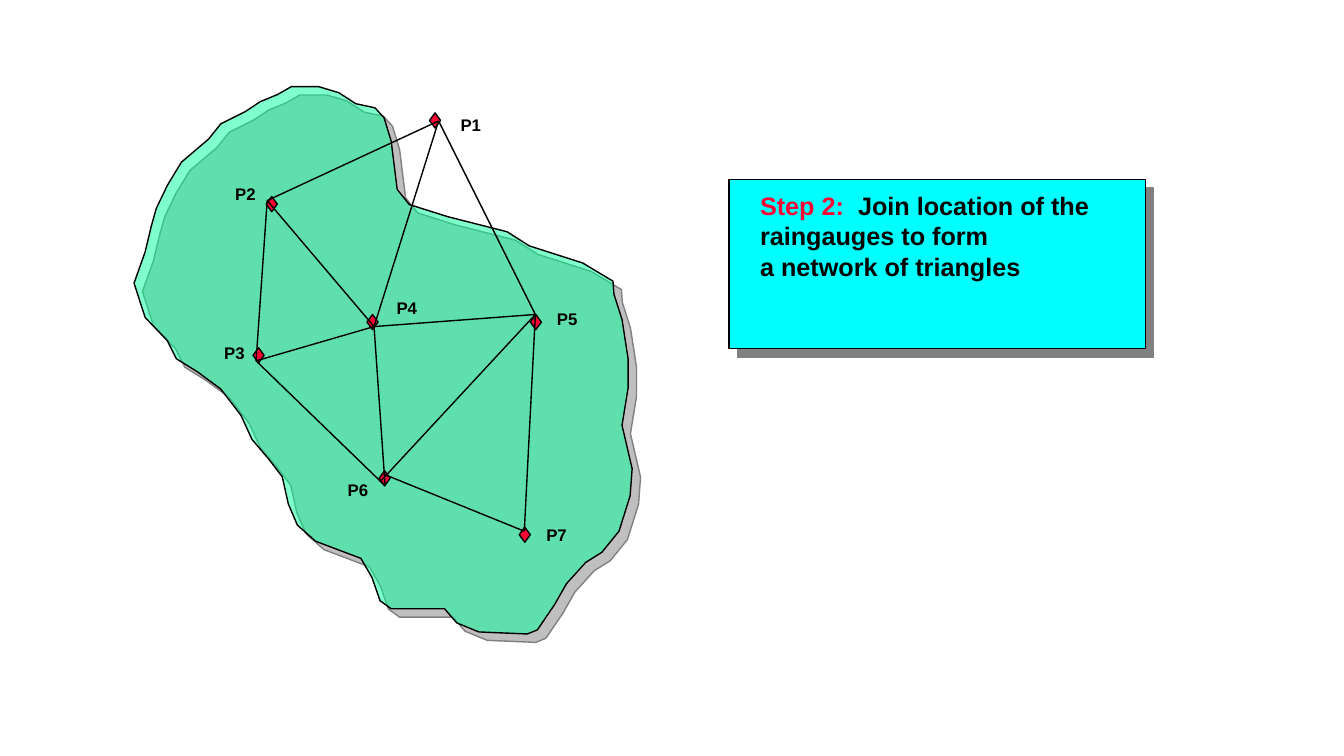
from lxml import etree
from pptx import Presentation
from pptx import util as u
from pptx.dml.color import RGBColor
from pptx.enum import shapes as kinds, text
from pptx.oxml.ns import qn

BLACK, RED, GREEN, CYAN, GREY = "000000", "FF0033", "00FF99", "00FFFF", "808080"
FONT = "Arial"

# Catchment boundary, in hundredths of an inch
CATCHMENT = [
    (275, 94), (258, 101), (243, 111), (219, 123), (207, 138), (180, 161), (166, 184),
    (155, 207), (150, 225), (144, 250), (133, 281), (144, 315), (166, 338), (175, 356),
    (196, 369), (219, 386), (239, 412), (250, 436), (267, 456), (280, 473), (286, 500),
    (295, 521), (313, 537), (358, 554), (369, 573), (377, 596), (388, 604), (441, 604),
    (453, 618), (475, 627), (523, 629), (533, 625), (550, 600), (562, 579), (581, 558),
    (597, 548), (614, 527), (625, 492), (627, 465), (617, 422), (623, 385), (623, 356),
    (617, 317), (609, 292), (608, 279), (578, 261), (525, 244), (503, 230), (444, 215),
    (406, 203), (394, 188), (388, 140), (381, 117), (372, 107), (353, 103), (336, 92),
    (316, 86), (289, 86),
]

# Raingauge: marker left and top, label left, top and width (inches)
GAUGES = {
    "P1": ((4.26, 1.12), (4.14, 1.09, 1.06)),
    "P2": ((2.64, 1.95), (2.01, 1.77, 0.85)),
    "P3": ((2.51, 3.45), (1.9, 3.35, 0.85)),
    "P4": ((3.64, 3.12), (3.61, 2.9, 0.85)),
    "P5": ((5.26, 3.12), (5.2, 3.01, 0.85)),
    "P6": ((3.76, 4.67), (3.07, 4.71, 0.96)),
    "P7": ((5.15, 5.23), (4.88, 5.16, 1.28)),
}
MARKER_SIZE = (0.11, 0.15)
LABEL_HEIGHT = 0.35

# Points where triangle sides meet; P6 is touched at three places
JOINTS = {
    "P1": (4.35, 1.2), "P2": (2.65, 1.99), "P3": (2.54, 3.58), "P4": (3.71, 3.24),
    "P5": (5.31, 3.12), "P6": (3.82, 4.82), "P7": (5.2, 5.27),
    "P6 left": (3.77, 4.78), "P6 top": (3.82, 4.71),
}
TRIANGLE_SIDES = [
    ("P2", "P1"), ("P2", "P3"), ("P3", "P4"), ("P1", "P4"), ("P1", "P5"), ("P4", "P5"),
    ("P2", "P4"), ("P3", "P6"), ("P4", "P6"), ("P6 left", "P5"), ("P6 top", "P7"), ("P5", "P7"),
]

STEP_PANEL = (7.23, 1.78, 4.13, 1.68)
STEP_AREA = (7.44, 1.84, 4.04, 1.17)
STEP = [
    [("Step 2:", RED), ("  Join location of the raingauges to form", BLACK)],
    [("a network of triangles", BLACK)],
]


def inches(*values):
    return [u.Cm(value * 2.54) for value in values]


def color(hex_code):
    return RGBColor.from_string(hex_code)


def paint(shape, fill):
    shape.fill.solid()
    shape.fill.fore_color.rgb = color(fill)
    shape.line.color.rgb = color(BLACK)
    shape.line.width = u.Pt(1)
    shape.shadow.inherit = False


def cast_shadow(shape):
    """Add a hard grey shadow towards the lower right."""
    effects = shape._element.spPr.find(qn("a:effectLst"))
    shadow = etree.SubElement(effects, qn("a:outerShdw"), dist=str(u.Pt(8.5)),
                              dir="2700000", algn="ctr", rotWithShape="0")
    etree.SubElement(shadow, qn("a:srgbClr"), val=GREY)


def write(slide, area, paragraphs, size, align):
    box = slide.shapes.add_textbox(*inches(*area))
    frame = box.text_frame
    frame.word_wrap = True
    for i, runs in enumerate(paragraphs):
        paragraph = frame.paragraphs[0] if i == 0 else frame.add_paragraph()
        paragraph.alignment = align
        for words, ink in runs:
            run = paragraph.add_run()
            run.text = words
            run.font.name = FONT
            run.font.size = u.Pt(size)
            run.font.bold = True
            run.font.color.rgb = color(ink)


def draw_catchment(slide):
    builder = slide.shapes.build_freeform(*CATCHMENT[0], scale=u.Cm(2.54) / 100)
    builder.add_line_segments(CATCHMENT[1:], close=True)
    catchment = builder.convert_to_shape()
    paint(catchment, GREEN)
    tint = catchment._element.spPr.find(qn("a:solidFill"))[0]
    etree.SubElement(tint, qn("a:alpha"), val="50000")
    cast_shadow(catchment)


def draw_network(slide):
    for marker, _ in GAUGES.values():
        paint(slide.shapes.add_shape(kinds.MSO_SHAPE.DIAMOND, *inches(*marker, *MARKER_SIZE)), RED)
    for start, end in TRIANGLE_SIDES:
        side = slide.shapes.add_connector(kinds.MSO_CONNECTOR.STRAIGHT,
                                          *inches(*JOINTS[start], *JOINTS[end]))
        side.line.color.rgb = color(BLACK)
        side.line.width = u.Pt(1)
        etree.SubElement(side._element.spPr, qn("a:effectLst"))
    for gauge, (_, label) in GAUGES.items():
        write(slide, (*label, LABEL_HEIGHT), [[(gauge, BLACK)]], 12, text.PP_ALIGN.CENTER)


def draw_step(slide):
    panel = slide.shapes.add_shape(kinds.MSO_SHAPE.RECTANGLE, *inches(*STEP_PANEL))
    paint(panel, CYAN)
    cast_shadow(panel)
    write(slide, STEP_AREA, STEP, 18, text.PP_ALIGN.LEFT)


def main():
    deck = Presentation()
    deck.slide_width, deck.slide_height = inches(13.33, 7.5)
    slide = deck.slides.add_slide(deck.slide_layouts[6])
    draw_catchment(slide)
    draw_network(slide)
    draw_step(slide)
    deck.save("out.pptx")


if __name__ == "__main__":
    main()
